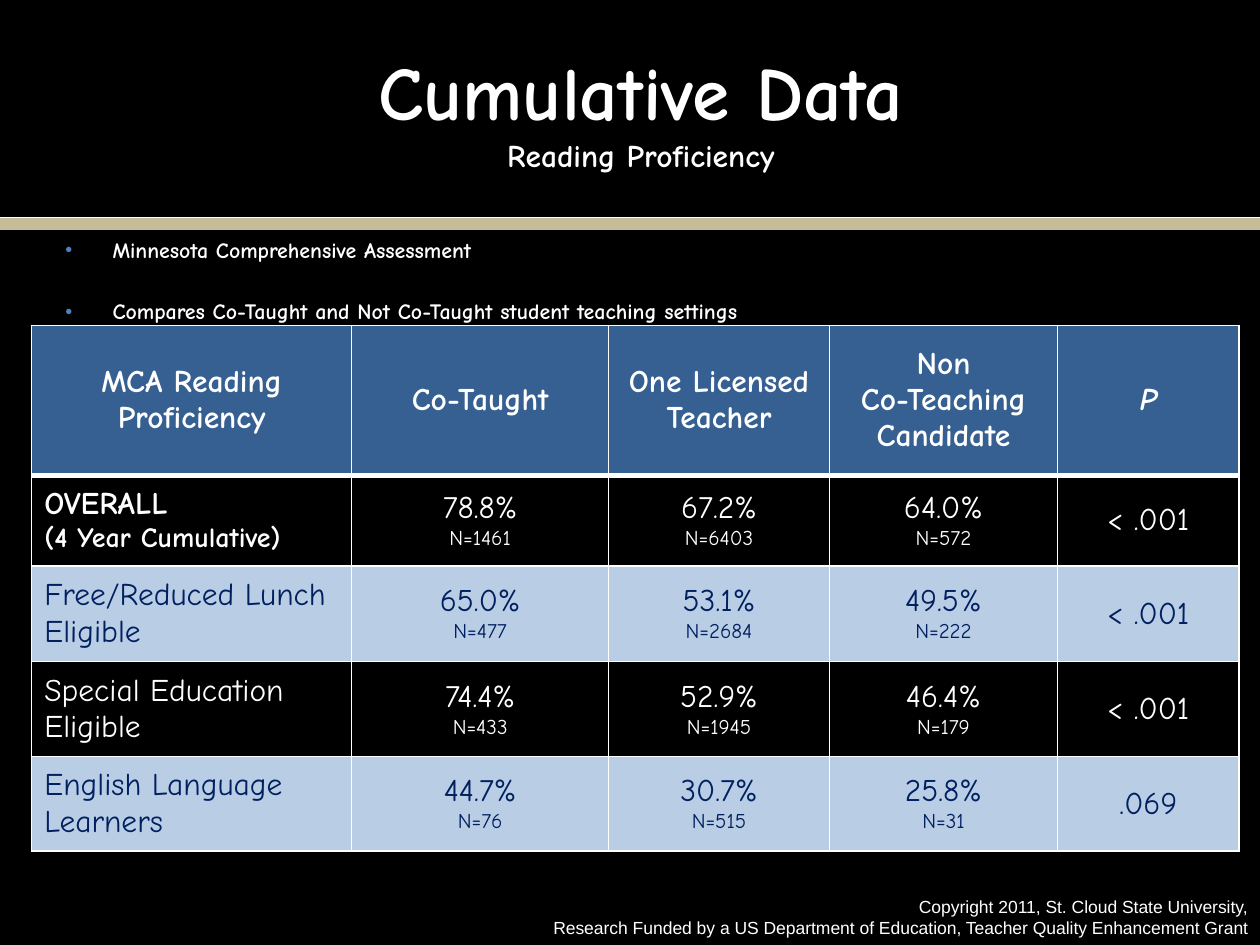
from lxml import etree
from pptx import Presentation
from pptx.dml.color import RGBColor
from pptx.enum.shapes import MSO_CONNECTOR
from pptx.enum.text import MSO_ANCHOR, PP_ALIGN
from pptx.oxml.ns import qn
from pptx.util import Cm, Pt

LEFT, CENTER, RIGHT = PP_ALIGN.LEFT, PP_ALIGN.CENTER, PP_ALIGN.RIGHT
TOP, MIDDLE = MSO_ANCHOR.TOP, MSO_ANCHOR.MIDDLE
STRAIGHT = MSO_CONNECTOR.STRAIGHT

BLACK = RGBColor(0x00, 0x00, 0x00)
WHITE = RGBColor(0xFF, 0xFF, 0xFF)
TAN = RGBColor(0xC4, 0xBD, 0x97)
HEADER_BLUE = RGBColor(0x37, 0x60, 0x92)
PALE_BLUE = RGBColor(0xB9, 0xCD, 0xE5)
NAVY = RGBColor(0x00, 0x20, 0x60)
BULLET_BLUE = RGBColor(0x4F, 0x81, 0xBD)

HAND, SANS = "Comic Neue", "Arial"
WIDTH, HEIGHT = Cm(25.4), Cm(19.05)

TITLE, SUBTITLE = "Cumulative Data", "Reading Proficiency"
POINTS = [
    "Minnesota Comprehensive Assessment",
    "Compares Co-Taught and Not Co-Taught student teaching settings",
]
HEADERS = [
    ["MCA Reading Proficiency"],
    ["Co-Taught"],
    ["One Licensed Teacher"],
    ["Non", "Co-Teaching", "Candidate"],
    ["P"],
]
GROUPS = [
    (["OVERALL", "(4 Year Cumulative)"],
     [("78.8%", "N=1461"), ("67.2%", "N=6403"), ("64.0%", "N=572")], "< .001"),
    (["Free/Reduced Lunch Eligible"],
     [("65.0%", "N=477"), ("53.1%", "N=2684"), ("49.5%", "N=222")], "< .001"),
    (["Special Education Eligible"],
     [("74.4%", "N=433"), ("52.9%", "N=1945"), ("46.4%", "N=179")], "< .001"),
    (["English Language Learners"],
     [("44.7%", "N=76"), ("30.7%", "N=515"), ("25.8%", "N=31")], ".069"),
]
CREDITS = [
    "Copyright 2011, St. Cloud State University,",
    "Research Funded by a US Department of Education, Teacher Quality Enhancement Grant",
]
COLUMN_WIDTHS = [6.45, 5.18, 4.45, 4.6, 3.66]
ROW_HEIGHTS = [3.02, 1.83, 1.93, 1.91, 1.91]
RULES = [(4.52, TAN, 7), (4.39, WHITE, 0.5)]


def style(font, size, color=WHITE, bold=False, name=HAND):
    font.name, font.size, font.bold = name, Pt(size), bold
    font.color.rgb = color


def write(frame, lines, sizes, align, color=WHITE, bold=False, name=HAND):
    for index, (line, size) in enumerate(zip(lines, sizes)):
        paragraph = frame.paragraphs[0] if index == 0 else frame.add_paragraph()
        paragraph.text = line
        paragraph.alignment = align
        style(paragraph.font, size, color, bold, name)


def add_frame(slide, left, top, width, height, anchor=TOP):
    frame = slide.shapes.add_textbox(Cm(left), Cm(top), Cm(width), Cm(height)).text_frame
    frame.word_wrap = True
    frame.vertical_anchor = anchor
    return frame


def add_rule(slide, y, color, weight):
    rule = slide.shapes.add_connector(STRAIGHT, 0, Cm(y), WIDTH, Cm(y))
    rule.line.color.rgb = color
    rule.line.width = Pt(weight)
    etree.SubElement(rule._element.spPr, qn("a:effectLst"))


def add_bullet(paragraph):
    paragraph.space_before = Pt(20)
    properties = paragraph._p.get_or_add_pPr()
    properties.set("marL", str(Cm(0.95)))
    properties.set("indent", str(-Cm(0.95)))
    color = etree.SubElement(properties, qn("a:buClr"))
    etree.SubElement(color, qn("a:srgbClr"), val=str(BULLET_BLUE))
    etree.SubElement(properties, qn("a:buSzPct"), val="90000")
    etree.SubElement(properties, qn("a:buFont"), typeface=SANS)
    etree.SubElement(properties, qn("a:buChar"), char="•")


def add_borders(cell, top, bottom):
    properties = cell._tc.get_or_add_tcPr()
    for side, weight in (("L", 1), ("R", 1), ("T", top), ("B", bottom)):
        border = etree.SubElement(properties, qn(f"a:ln{side}"), w=str(Pt(weight)))
        fill = etree.SubElement(border, qn("a:solidFill"))
        etree.SubElement(fill, qn("a:srgbClr"), val=str(WHITE))


def add_results(slide):
    table = slide.shapes.add_table(
        len(ROW_HEIGHTS), len(COLUMN_WIDTHS), Cm(0.64), Cm(6.56),
        Cm(sum(COLUMN_WIDTHS)), Cm(sum(ROW_HEIGHTS))).table
    for column, width in zip(table.columns, COLUMN_WIDTHS):
        column.width = Cm(width)
    for r, height in enumerate(ROW_HEIGHTS):
        table.rows[r].height = Cm(height)
        for cell in table.rows[r].cells:
            cell.vertical_anchor = MIDDLE
            add_borders(cell, 3 if r == 1 else 1, 3 if r == 0 else 1)
            if r in (1, 3):
                cell.fill.background()
            else:
                cell.fill.solid()
                cell.fill.fore_color.rgb = HEADER_BLUE if r == 0 else PALE_BLUE

    for c, lines in enumerate(HEADERS):
        write(table.cell(0, c).text_frame, lines, [18] * len(lines), CENTER, bold=True)
    table.cell(0, len(HEADERS) - 1).text_frame.paragraphs[0].font.italic = True

    for r, (label, settings, p_value) in enumerate(GROUPS, 1):
        color = NAVY if r % 2 == 0 else WHITE
        write(table.cell(r, 0).text_frame, label, (18, 16), LEFT, color, bold=r == 1)
        for c, result in enumerate([*settings, (p_value,)], 1):
            write(table.cell(r, c).text_frame, result, (18, 12), CENTER, color)


def main():
    deck = Presentation()
    deck.slide_width, deck.slide_height = WIDTH, HEIGHT
    slide = deck.slides.add_slide(deck.slide_layouts[6])
    slide.background.fill.solid()
    slide.background.fill.fore_color.rgb = BLACK

    for rule in RULES:
        add_rule(slide, *rule)

    heading = add_frame(slide, 1.07, 0.84, 23.7, 2.74, MIDDLE).paragraphs[0]
    heading.alignment = CENTER
    title = heading.add_run()
    title.text = TITLE
    style(title.font, 43.2, bold=True)
    heading.add_line_break()
    subtitle = heading.add_run()
    subtitle.text = SUBTITLE
    style(subtitle.font, 18, bold=True)

    points = add_frame(slide, 1.07, 4.65, 23.62, 1.9)
    write(points, POINTS, [12.5] * len(POINTS), LEFT, bold=True)
    for paragraph in points.paragraphs:
        add_bullet(paragraph)

    add_results(slide)

    credits = add_frame(slide, 9.96, 17.93, 15.44, 1.12)
    write(credits, CREDITS, [10] * len(CREDITS), RIGHT, name=SANS)

    deck.save("out.pptx")


if __name__ == "__main__":
    main()
